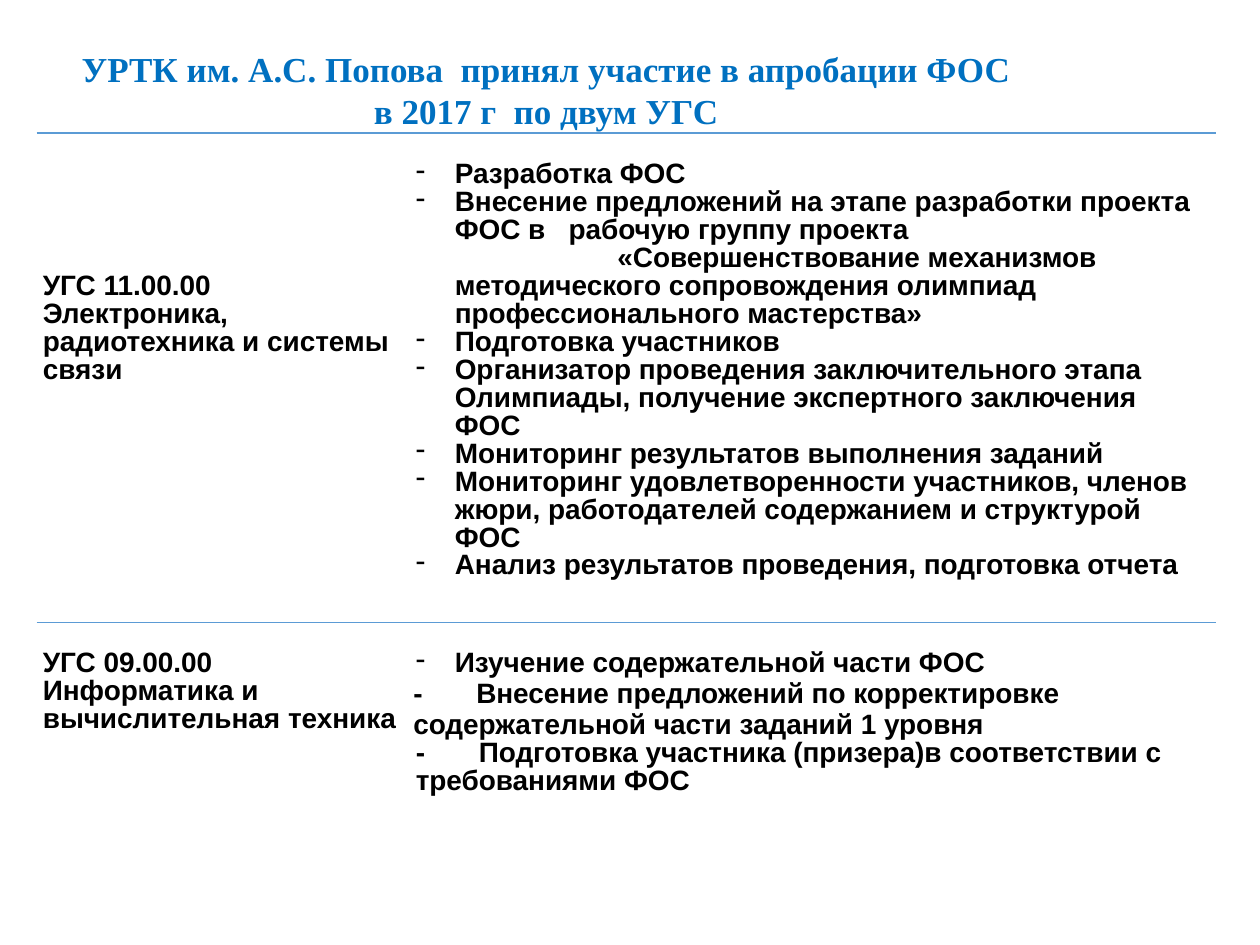
import pptx
import pptx.dml.color
import pptx.enum.text
import pptx.oxml
import pptx.oxml.ns
import pptx.util
from lxml import etree

NAMESPACE = pptx.oxml.ns.nsdecls("a")
WIDTH = pptx.util.Inches(10)
HEIGHT = pptx.util.Inches(7.5)
LINE = pptx.util.Pt(16)


def add_run(paragraph, text, font_name, size, color):
    run = paragraph.add_run()
    run.text = text
    run.font.name = font_name
    run.font.size = pptx.util.Pt(size)
    run.font.bold = True
    run.font.color.rgb = pptx.dml.color.RGBColor.from_string(color)


def set_layout(paragraph, margin, indent, bullet, tab):
    properties = paragraph._p.get_or_add_pPr()
    properties.set("marL", str(pptx.util.Inches(margin)))
    properties.set("indent", str(pptx.util.Inches(indent)))
    if bullet:
        etree.SubElement(properties, pptx.oxml.ns.qn("a:buFontTx"))
        etree.SubElement(properties, pptx.oxml.ns.qn("a:buChar")).set("char", "-")
    else:
        etree.SubElement(properties, pptx.oxml.ns.qn("a:buNone"))
    if tab:
        properties.append(pptx.oxml.parse_xml(
            f'<a:tabLst {NAMESPACE}><a:tab pos="{pptx.util.Inches(tab)}" algn="l"/></a:tabLst>'))


presentation = pptx.Presentation()
presentation.slide_width = WIDTH
presentation.slide_height = HEIGHT
slide = presentation.slides.add_slide(presentation.slide_layouts[6])

PLAIN = (0, 0, False, None)
BULLET = (0.33, -0.31, True, None)
DASH = (0, 0, False, 0.38)
INDENTED_DASH = (0.02, 0, False, 0.4)

cells = [
    (0, 0, 5, [(PLAIN, ["УГС 11.00.00 Электроника, радиотехника и системы связи"])]),
    (0, 1, 1, [
        (BULLET, ["Разработка ФОС"]),
        ((0.33, -0.31, True, 1.62), [
            "Внесение предложений на этапе разработки проекта ФОС в   рабочую группу проекта",
            "\t«Совершенствование механизмов",
            "методического сопровождения олимпиад профессионального мастерства»"]),
        (BULLET, ["Подготовка участников"]),
        (BULLET, ["Организатор проведения заключительного этапа Олимпиады, получение экспертного заключения ФОС"]),
        (BULLET, ["Мониторинг результатов выполнения заданий"]),
        (BULLET, ["Мониторинг удовлетворенности участников, членов жюри, работодателей содержанием и структурой ФОС"]),
        (BULLET, ["Анализ результатов проведения, подготовка отчета"])]),
    (1, 0, 1, [(PLAIN, ["УГС 09.00.00 Информатика и вычислительная техника"])]),
    (1, 1, 1, [
        (BULLET, ["Изучение содержательной части ФОС"]),
        (DASH, ["-\tВнесение предложений по корректировке содержательной части заданий 1 уровня"]),
        (INDENTED_DASH, ["-\tПодготовка участника (призера)в соответствии с требованиями ФОС"])]),
]

column_shares = [0.294, 0.642]
row_shares = [0.518, 0.464]
frame = slide.shapes.add_table(
    2, 2, int(WIDTH * 0.029), int(HEIGHT * 0.141),
    int(WIDTH * sum(column_shares)), int(HEIGHT * sum(row_shares)))
table = frame.table
table.first_row = False
table.horz_banding = False
for column, share in zip(table.columns, column_shares):
    column.width = int(WIDTH * share)
for row, share in zip(table.rows, row_shares):
    row.height = int(HEIGHT * share)

for row_index, column_index, top_lines, paragraphs in cells:
    cell = table.cell(row_index, column_index)
    cell.margin_left = cell.margin_right = pptx.util.Inches(0.05)
    cell.margin_top = LINE * top_lines
    cell.margin_bottom = 0
    cell.fill.background()
    properties = cell._tc.get_or_add_tcPr()
    for position, side in enumerate(["lnL", "lnR", "lnT", "lnB"]):
        paint = '<a:solidFill><a:srgbClr val="5B9BD5"/></a:solidFill>' if position > 1 else "<a:noFill/>"
        properties.insert(position, pptx.oxml.parse_xml(
            f'<a:{side} {NAMESPACE} w="{pptx.util.Pt(1)}">{paint}</a:{side}>'))
    for index, (layout, lines) in enumerate(paragraphs):
        paragraph = cell.text_frame.paragraphs[0] if index == 0 else cell.text_frame.add_paragraph()
        if layout != DASH:
            paragraph.line_spacing = LINE
        set_layout(paragraph, *layout)
        for line_index, line in enumerate(lines):
            if line_index:
                paragraph.add_line_break()
            add_run(paragraph, line, "Arial", 16, "000000")

title = slide.shapes.add_textbox(
    int(WIDTH * 0.023), int(HEIGHT * 0.059), int(WIDTH * 0.821), int(HEIGHT * 0.071))
title_frame = title.text_frame
title_frame.word_wrap = True
title_frame.vertical_anchor = pptx.enum.text.MSO_ANCHOR.MIDDLE
title_frame.margin_left = title_frame.margin_right = 0
title_frame.margin_top = title_frame.margin_bottom = 0
for index, text in enumerate(["УРТК им. А.С. Попова  принял участие в апробации ФОС", "в 2017 г  по двум УГС"]):
    paragraph = title_frame.paragraphs[0] if index == 0 else title_frame.add_paragraph()
    paragraph.alignment = pptx.enum.text.PP_ALIGN.CENTER
    add_run(paragraph, text, "Times New Roman", 20, "0070C0")

presentation.save("out.pptx")
